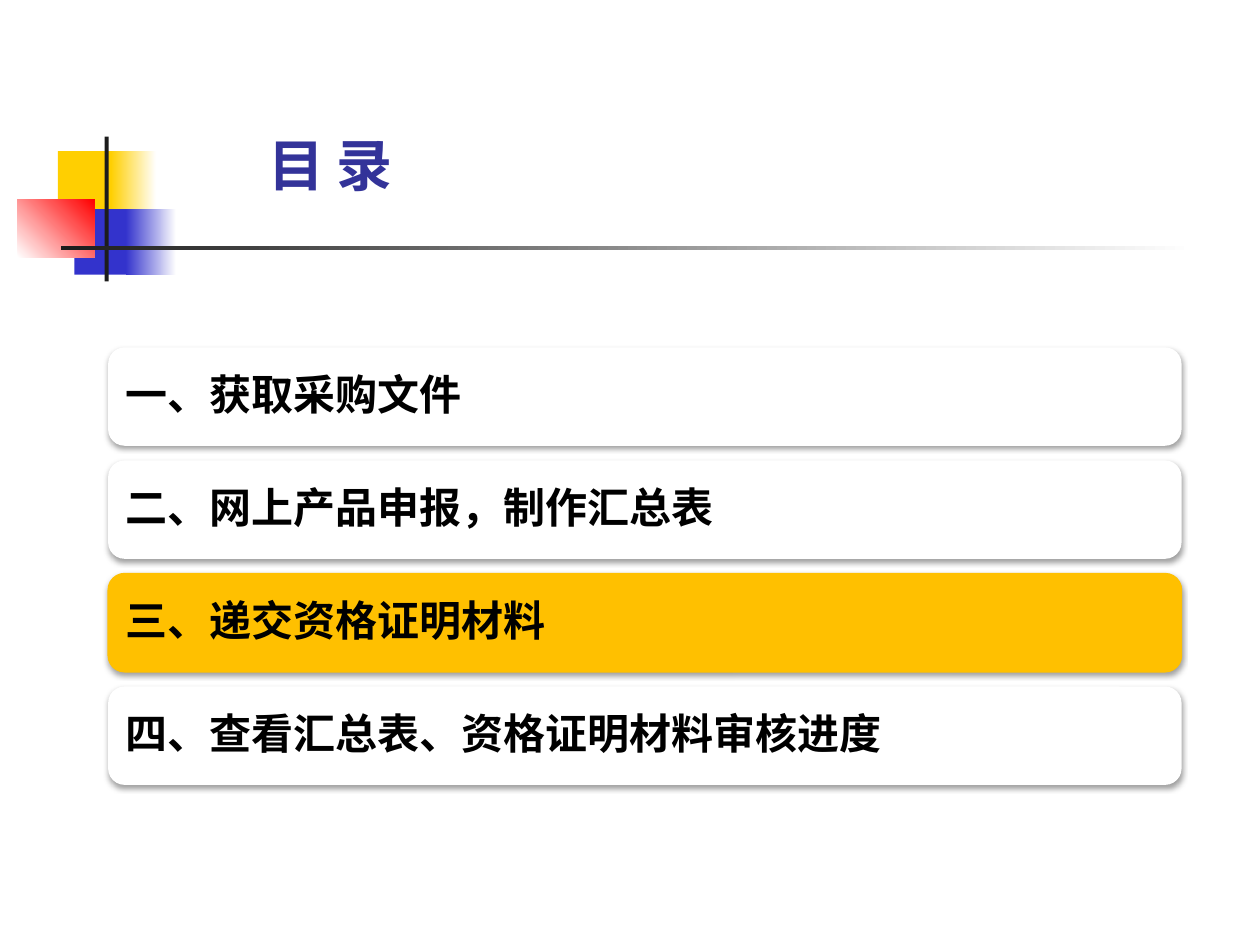
from dataclasses import dataclass

from lxml.etree import SubElement
from pptx import Presentation
from pptx.dml.color import RGBColor as RGB
from pptx.enum.shapes import MSO_SHAPE as SHAPE
from pptx.enum.text import MSO_ANCHOR as ANCHOR, PP_ALIGN as ALIGN
from pptx.oxml.ns import qn
from pptx.util import Pt


@dataclass(frozen=True)
class Theme:
    white: str = "FFFFFF"
    black: str = "000000"
    ink: str = "1C1C1C"
    yellow: str = "FFCF01"
    blue: str = "3333CC"
    red: str = "FF0000"
    title: str = "333399"
    highlight: str = "FFC000"
    title_font: str = "Noto Sans CJK SC"
    item_font: str = "Roboto"
    title_size: int = 32
    item_size: int = 24


THEME = Theme()
ITEMS = [
    "一、获取采购文件",
    "二、网上产品申报，制作汇总表",
    "三、递交资格证明材料",
    "四、查看汇总表、资格证明材料审核进度",
]
CURRENT_ITEM = 2


def place(*lengths):
    return [Pt(length) for length in lengths]


def write(frame, text, font, size, color, **para_format):
    """Put one bold, left-aligned, vertically centred line in a text frame."""
    frame.word_wrap = True
    frame.vertical_anchor = ANCHOR.MIDDLE
    para = frame.paragraphs[0]
    for name, value in {"alignment": ALIGN.LEFT, **para_format}.items():
        setattr(para, name, value)
    span = para.add_run()
    span.text = text
    for name, value in {"name": font, "size": Pt(size), "bold": True}.items():
        setattr(span.font, name, value)
    span.font.color.rgb = RGB.from_string(color)
    return span


def add_block(page, box, colors, angle=0):
    """Draw a borderless rectangle: one colour is solid, two make a gradient."""
    block = page.shapes.add_shape(SHAPE.RECTANGLE, *place(*box))
    block.shadow.inherit = False
    block.line.fill.background()
    if len(colors) == 1:
        block.fill.solid()
        block.fill.fore_color.rgb = RGB.from_string(colors[0])
        return
    block.fill.gradient()
    block.fill.gradient_angle = angle
    for stop, color in zip(block.fill.gradient_stops, colors):
        stop.color.rgb = RGB.from_string(color)


def add_ornament(page, left, top, width, height):
    """Coloured squares crossed by a vertical bar and a long fading rule."""
    t = THEME
    bar = 2.3
    square = 37.4
    parts = [
        (23.1, 8.4, 34.6, square, [t.yellow], 0),
        (53.4, 8.4, 25.9, square, [t.yellow, t.white], 0),
        (32.5, 41.5, 33.1, square, [t.blue], 0),
        (62, 41.5, 28.8, square, [t.blue, t.white], 0),
        (0, 35.8, 43.9, 33.1, [t.white, t.red], 45),
        (49.8, 0, bar, height, [t.ink], 0),
        (24.6, 62.4, width - 24.6, bar, [t.ink, t.white], 0),
    ]
    for x, y, part_width, part_height, colors, angle in parts:
        add_block(page, (left + x, top + y, part_width, part_height), colors, angle)


def add_title(page, text, box):
    title = page.shapes.title
    title.left, title.top, title.width, title.height = place(*box)
    span = write(title.text_frame, text, THEME.title_font, THEME.title_size, THEME.title)
    SubElement(span.font._element, qn("a:ea"), typeface=THEME.title_font)


def add_soft_shadow(shape):
    effects = SubElement(shape._element.spPr, qn("a:effectLst"))
    shadow = SubElement(effects, qn("a:outerShdw"), blurRad=str(Pt(3.15)),
                        dist=str(Pt(1.6)), dir="5400000", rotWithShape="0")
    color = SubElement(shadow, qn("a:srgbClr"), val=THEME.black)
    SubElement(color, qn("a:alpha"), val="38000")


def add_card(page, text, left, top, width, height, current):
    """Group a rounded card with its label."""
    group = page.shapes.add_group_shape()
    card = group.shapes.add_shape(SHAPE.ROUNDED_RECTANGLE, *place(left, top, width, height))
    color = RGB.from_string(THEME.highlight if current else THEME.white)
    card.fill.solid()
    card.fill.fore_color.rgb = color
    if current:
        card.line.color.rgb = color
        card.line.width = Pt(0.75)
    else:
        card.line.fill.background()
    add_soft_shadow(card)

    edge = 2.75
    label = group.shapes.add_textbox(
        *place(left + edge, top + edge, width - 2 * edge, height - 2 * edge))
    for side in ("left", "top", "right", "bottom"):
        setattr(label.text_frame, f"margin_{side}", Pt(7.2))
    write(label.text_frame, text, THEME.item_font, THEME.item_size, THEME.black,
          line_spacing=0.9)


def add_agenda(page, items, left, top, width, height, gap=8.4):
    """Stack equal cards to fill the box."""
    card_height = (height - gap * (len(items) - 1)) / len(items)
    for index, text in enumerate(items):
        card_top = top + index * (card_height + gap)
        add_card(page, text, left, card_top, width, card_height, index == CURRENT_ITEM)


def main():
    deck = Presentation()
    deck.slide_width, deck.slide_height = place(720, 540)
    page = deck.slides.add_slide(deck.slide_layouts[5])
    add_ornament(page, 10, 78, 672.6, 82.8)
    add_title(page, "目 录", (146, 49, 574, 90))
    add_agenda(page, ITEMS, 61.8, 198.5, 613.4, 250)
    deck.save("out.pptx")


if __name__ == "__main__":
    main()
